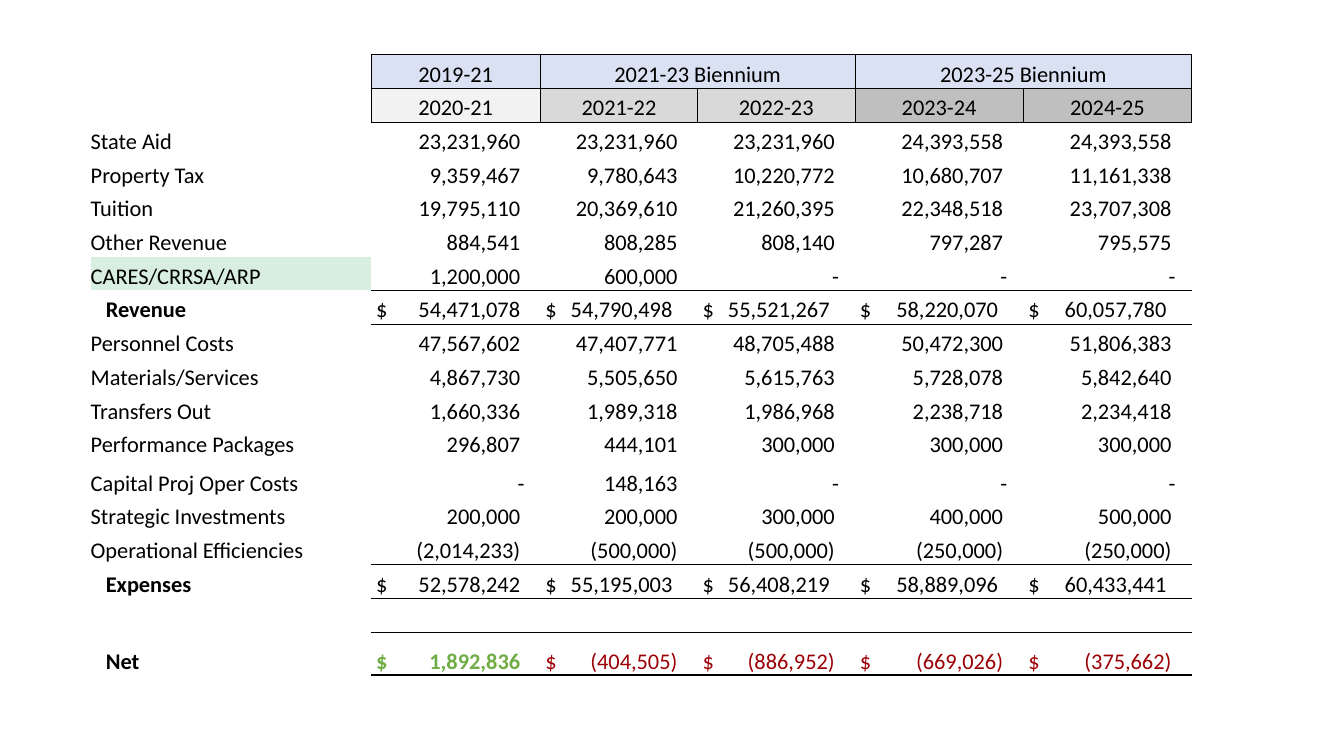
from lxml import etree
from pptx import Presentation
from pptx.dml.color import RGBColor
from pptx.enum.text import MSO_ANCHOR, PP_ALIGN
from pptx.oxml.ns import qn
from pptx.util import Inches, Pt

BOTTOM = MSO_ANCHOR.BOTTOM
LEFT, CENTER, RIGHT = PP_ALIGN.LEFT, PP_ALIGN.CENTER, PP_ALIGN.RIGHT
BLANK_LAYOUT = 6
NO_GRID_STYLE = "{2D5ABB26-0587-4C30-8999-92F81FD0307C}"

COLORS = {
    "ink": "000000",
    "biennium": "D9E1F2",
    "first_year": "F2F2F2",
    "second_years": "D9D9D9",
    "third_years": "BFBFBF",
    "relief": "D8EEE1",
    "surplus": "70AD47",
    "deficit": "9C0006",
}

BIENNIA = [
    ("2019-21", ["2020-21"], "first_year"),
    ("2021-23 Biennium", ["2021-22", "2022-23"], "second_years"),
    ("2023-25 Biennium", ["2023-24", "2024-25"], "third_years"),
]

BUDGET = [
    ("State Aid", "23,231,960", "23,231,960", "23,231,960", "24,393,558", "24,393,558"),
    ("Property Tax", "9,359,467", "9,780,643", "10,220,772", "10,680,707", "11,161,338"),
    ("Tuition", "19,795,110", "20,369,610", "21,260,395", "22,348,518", "23,707,308"),
    ("Other Revenue", "884,541", "808,285", "808,140", "797,287", "795,575"),
    ("CARES/CRRSA/ARP", "1,200,000", "600,000", "-", "-", "-"),
    ("Revenue", "54,471,078", "54,790,498", "55,521,267", "58,220,070", "60,057,780"),
    ("Personnel Costs", "47,567,602", "47,407,771", "48,705,488", "50,472,300", "51,806,383"),
    ("Materials/Services", "4,867,730", "5,505,650", "5,615,763", "5,728,078", "5,842,640"),
    ("Transfers Out", "1,660,336", "1,989,318", "1,986,968", "2,238,718", "2,234,418"),
    ("Performance Packages", "296,807", "444,101", "300,000", "300,000", "300,000"),
    ("Capital Proj Oper Costs", "-", "148,163", "-", "-", "-"),
    ("Strategic Investments", "200,000", "200,000", "300,000", "400,000", "500,000"),
    ("Operational Efficiencies", "(2,014,233)", "(500,000)", "(500,000)", "(250,000)", "(250,000)"),
    ("Expenses", "52,578,242", "55,195,003", "56,408,219", "58,889,096", "60,433,441"),
    ("",) * 6,
    ("Net", "1,892,836", "(404,505)", "(886,952)", "(669,026)", "(375,662)"),
]
TOTALS = ("Revenue", "Expenses", "Net")
HEADER_ROWS = 2
COLUMN_WIDTHS = [2.78, 1.68, 1.56, 1.56, 1.67, 1.67]
TALL_ROWS = {"Capital Proj Oper Costs": 0.38, "Net": 0.43}
DOLLAR_INSET = 0.05
TOTAL_INDENT = 0.15


def rule(cell, sides, points=0.5):
    for side in sides:
        line = etree.SubElement(cell._tc.get_or_add_tcPr(), qn(f"a:ln{side}"), w=str(Pt(points)))
        fill = etree.SubElement(line, qn("a:solidFill"))
        etree.SubElement(fill, qn("a:srgbClr"), val=COLORS["ink"])


def write(cell, text, align=LEFT, left=0, right=0, bold=False, color="ink", fill=None):
    cell.margin_left, cell.margin_right = Inches(left), Inches(right)
    cell.margin_top = cell.margin_bottom = 0
    cell.vertical_anchor = BOTTOM
    if fill:
        cell.fill.solid()
        cell.fill.fore_color.rgb = RGBColor.from_string(COLORS[fill])
    else:
        cell.fill.background()
    paragraph = cell.text_frame.paragraphs[0]
    paragraph.text = text
    paragraph.alignment = align
    paragraph.font.name = "Calibri"
    paragraph.font.size = Pt(16)
    paragraph.font.bold = bold
    paragraph.font.color.rgb = RGBColor.from_string(COLORS[color])
    return paragraph


def write_dollars(cell, amount, width, gap, bold, color):
    paragraph = write(cell, f"$\t{amount}", left=DOLLAR_INSET, bold=bold, color=color)
    stops = etree.Element(qn("a:tabLst"))
    position = Inches(width - DOLLAR_INSET - gap)
    etree.SubElement(stops, qn("a:tab"), pos=str(position), algn="r")
    paragraph._p.get_or_add_pPr().insert(0, stops)


def fill_header(table):
    for row in range(HEADER_ROWS):
        write(table.cell(row, 0), "")
    column = 1
    for biennium, years, shade in BIENNIA:
        last = len(years) - 1
        heading = table.cell(0, column)
        if last:
            heading.merge(table.cell(0, column + last))
        rule(heading, "LRTB")
        write(heading, biennium, CENTER, fill="biennium")
        for offset, year in enumerate(years):
            cell = table.cell(1, column + offset)
            sides = ("L" if offset == 0 else "") + ("R" if offset == last else "") + "TB"
            rule(cell, sides)
            write(cell, year, CENTER, fill=shade)
        column += len(years)


def fill_budget_row(table, row, label, amounts):
    total = label in TOTALS
    net = label == "Net"
    write(table.cell(row, 0), label, left=TOTAL_INDENT if total else 0, bold=total,
          fill="relief" if label == "CARES/CRRSA/ARP" else None)
    for column, amount in enumerate(amounts, start=1):
        cell = table.cell(row, column)
        if not total:
            write(cell, amount, RIGHT, right=0.16 if amount == "-" else 0.2)
            continue
        rule(cell, "T")
        rule(cell, "B", 2 if net else 0.5)
        surplus = net and not amount.startswith("(")
        color = ("surplus" if surplus else "deficit") if net else "ink"
        gap = 0.2 if net or column == 1 else 0.25
        write_dollars(cell, amount, COLUMN_WIDTHS[column], gap, surplus, color)


def add_budget_table(slide, left, top, width, height):
    row_count = HEADER_ROWS + len(BUDGET)
    frame = slide.shapes.add_table(row_count, len(COLUMN_WIDTHS), Inches(left), Inches(top),
                                   Inches(width), Inches(height))
    table = frame.table
    table.first_row = table.horz_banding = False
    table._tbl.tblPr.find(qn("a:tableStyleId")).text = NO_GRID_STYLE
    for column, column_width in zip(table.columns, COLUMN_WIDTHS):
        column.width = Inches(column_width)
    plain_height = (height - sum(TALL_ROWS.values())) / (row_count - len(TALL_ROWS))
    for row in table.rows:
        row.height = Inches(plain_height)
    fill_header(table)
    for row, (label, *amounts) in enumerate(BUDGET, start=HEADER_ROWS):
        table.rows[row].height = Inches(TALL_ROWS.get(label, plain_height))
        fill_budget_row(table, row, label, amounts)


def main():
    presentation = Presentation()
    presentation.slide_width, presentation.slide_height = Inches(13.33), Inches(7.5)
    slide = presentation.slides.add_slide(presentation.slide_layouts[BLANK_LAYOUT])
    add_budget_table(slide, 0.9, 0.54, sum(COLUMN_WIDTHS), 6.16)
    presentation.save("out.pptx")


if __name__ == "__main__":
    main()
